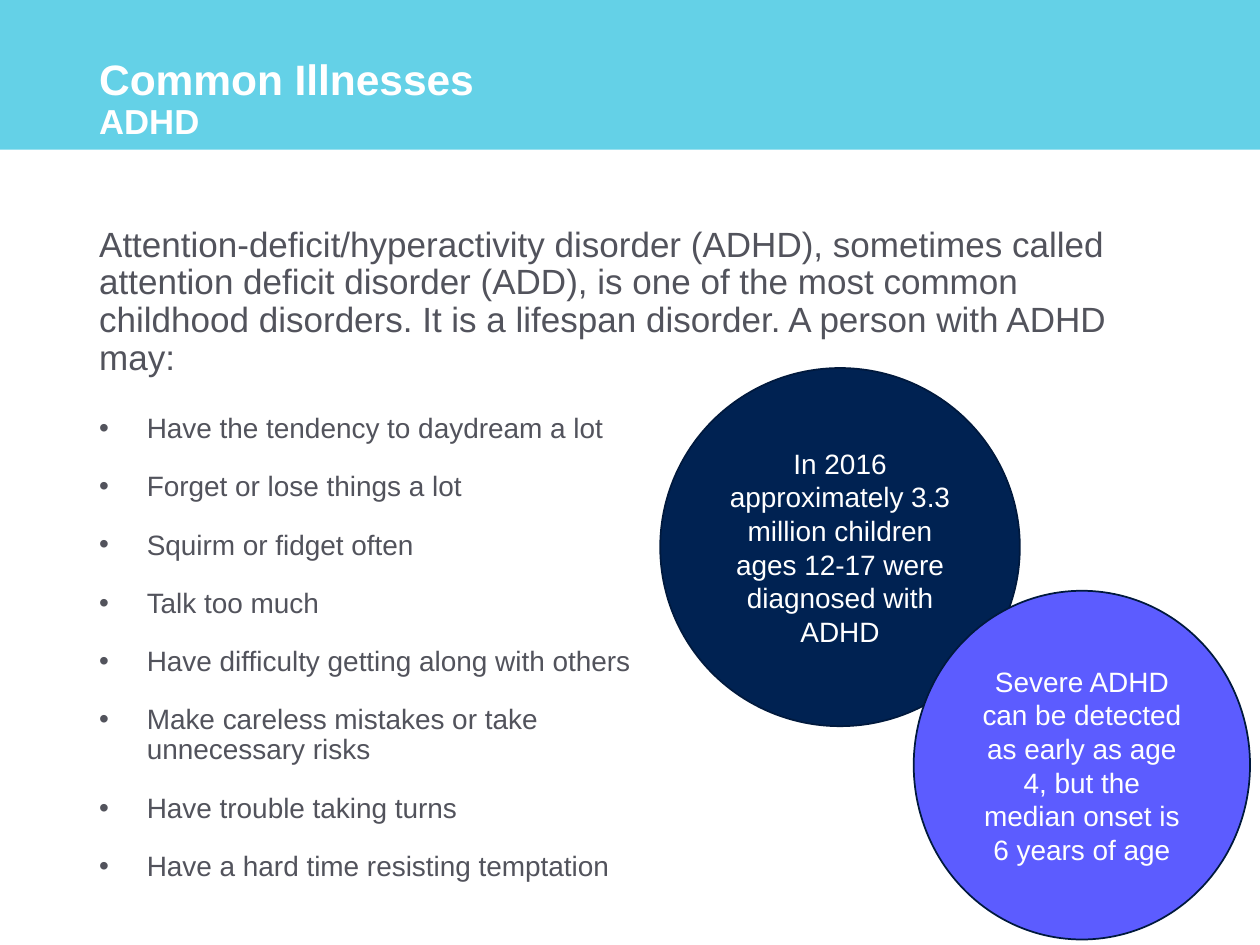
import pptx
import pptx.dml.color
import pptx.enum.shapes
import pptx.enum.text
import pptx.oxml.ns
import pptx.util
from lxml import etree

Cm = pptx.util.Cm
Pt = pptx.util.Pt
RGBColor = pptx.dml.color.RGBColor
MSO_SHAPE = pptx.enum.shapes.MSO_SHAPE
PP_ALIGN = pptx.enum.text.PP_ALIGN
MSO_ANCHOR = pptx.enum.text.MSO_ANCHOR

WHITE = RGBColor(0xFF, 0xFF, 0xFF)
CYAN = RGBColor(0x64, 0xD1, 0xE7)
GRAY = RGBColor(0x52, 0x53, 0x5C)
NAVY = RGBColor(0x00, 0x22, 0x52)
VIOLET = RGBColor(0x5C, 0x5C, 0xFF)
OUTLINE = RGBColor(0x00, 0x19, 0x3D)

LEFT = 1.75
WIDTH = 21.9

SYMPTOMS = [
    "Have the tendency to daydream a lot",
    "Forget or lose things a lot",
    "Squirm or fidget often",
    "Talk too much",
    "Have difficulty getting along with others",
    "Make careless mistakes or take unnecessary risks",
    "Have trouble taking turns",
    "Have a hard time resisting temptation",
]


def add_run(p, text, size=16, color=GRAY, bold=False):
    r = p.add_run()
    r.text = text
    r.font.name = "Arial"
    r.font.size = Pt(size)
    r.font.bold = bold
    r.font.color.rgb = color


def add_bullet(p, indent=0.96):
    pPr = p._p.get_or_add_pPr()
    pPr.set("marL", str(Cm(indent)))
    pPr.set("indent", str(-Cm(indent)))
    qn = pptx.oxml.ns.qn
    etree.SubElement(pPr, qn("a:buFont")).set("typeface", "Arial")
    etree.SubElement(pPr, qn("a:buChar")).set("char", "•")


class Deck:
    def __init__(self, slide):
        self.slide = slide

    def shape(self, kind, x, y, w, h, fill, line=None):
        sp = self.slide.shapes.add_shape(kind, Cm(x), Cm(y), Cm(w), Cm(h))
        sp.shadow.inherit = False
        sp.fill.solid()
        sp.fill.fore_color.rgb = fill
        if line is None:
            sp.line.fill.background()
        else:
            sp.line.color.rgb = line
            sp.line.width = Pt(1)
        return sp

    def text_frame(self, x, y, w, h, anchor=MSO_ANCHOR.TOP):
        sp = self.slide.shapes.add_textbox(Cm(x), Cm(y), Cm(w), Cm(h))
        tf = sp.text_frame
        tf.word_wrap = True
        tf.vertical_anchor = anchor
        return tf

    def title(self, x, y, w, h, heading, topic):
        p = self.text_frame(x, y, w, h, MSO_ANCHOR.MIDDLE).paragraphs[0]
        p.line_spacing = 0.9
        add_run(p, heading, size=24.3, color=WHITE, bold=True)
        p.add_line_break()
        add_run(p, topic, size=19.8, color=WHITE, bold=True)

    def body(self, x, y, w, h, texts, size=16, bullets=False):
        tf = self.text_frame(x, y, w, h)
        for i, text in enumerate(texts):
            p = tf.add_paragraph() if i else tf.paragraphs[0]
            p.line_spacing = 0.9
            p.space_before = Pt(10)
            p.space_after = Pt(6)
            if bullets:
                add_bullet(p)
            add_run(p, text, size=size)

    def circle(self, x, y, w, h, text, fill):
        sp = self.shape(MSO_SHAPE.OVAL, x, y, w, h, fill, OUTLINE)
        tf = sp.text_frame
        tf.word_wrap = True
        tf.vertical_anchor = MSO_ANCHOR.MIDDLE
        p = tf.paragraphs[0]
        p.alignment = PP_ALIGN.CENTER
        add_run(p, text, color=WHITE)


def main():
    prs = pptx.Presentation()
    prs.slide_width = Cm(25.4)
    prs.slide_height = Cm(19.05)
    deck = Deck(prs.slides.add_slide(prs.slide_layouts[6]))

    deck.shape(MSO_SHAPE.RECTANGLE, 0, 0, 25.4, 3.02, CYAN)
    deck.title(LEFT, 1.02, WIDTH, 2, "Common Illnesses", "ADHD")
    deck.body(LEFT, 4.45, WIDTH, 3.38, [
        "Attention-deficit/hyperactivity disorder (ADHD), sometimes called "
        "attention deficit disorder (ADD), is one of the most common "
        "childhood disorders. It is a lifespan disorder. "
        "A person with ADHD may:"], size=20)
    deck.body(LEFT, 8.23, 11.58, 10.29, SYMPTOMS, bullets=True)
    deck.circle(13.31, 7.42, 7.25, 7.22,
                "In 2016 approximately 3.3 million children ages 12-17 "
                "were diagnosed with ADHD", NAVY)
    deck.circle(18.42, 11.91, 6.78, 7.03,
                "Severe ADHD can be detected as early as age 4, "
                "but the median onset is 6 years of age", VIOLET)
    prs.save("out.pptx")


if __name__ == "__main__":
    main()
